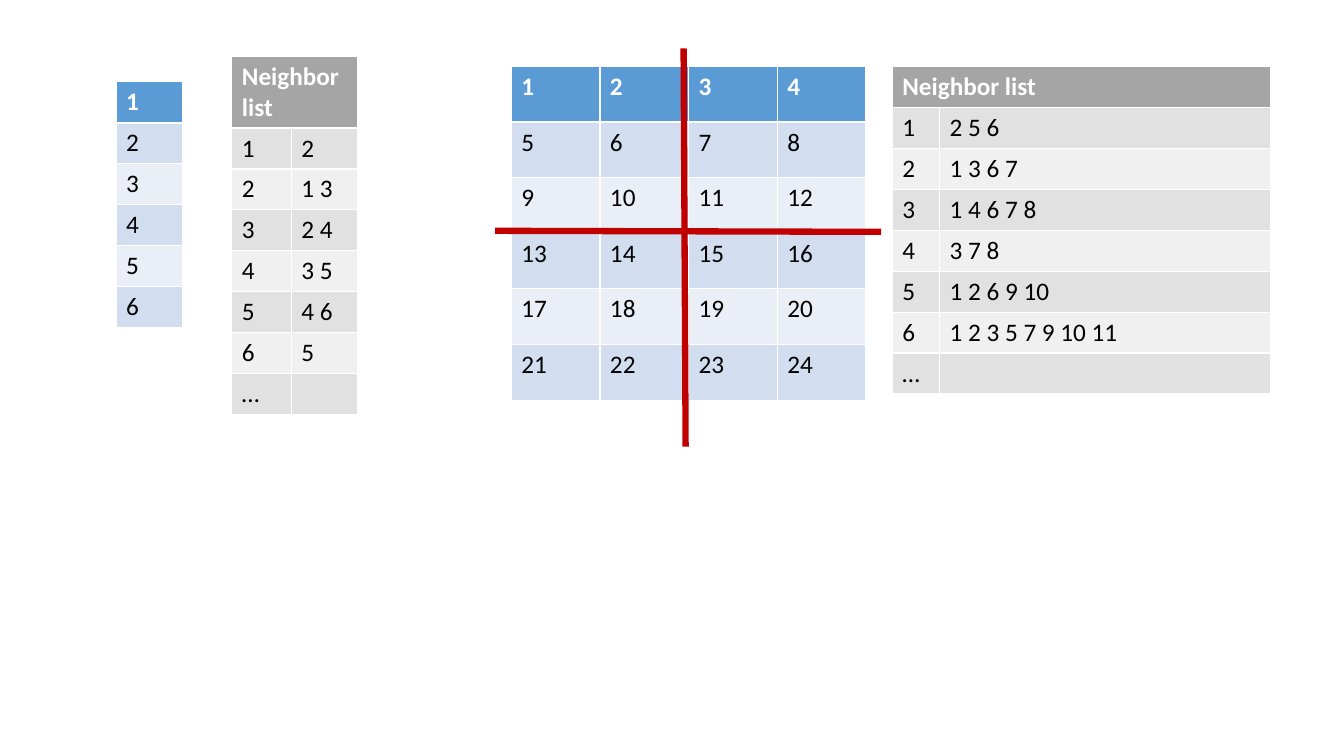
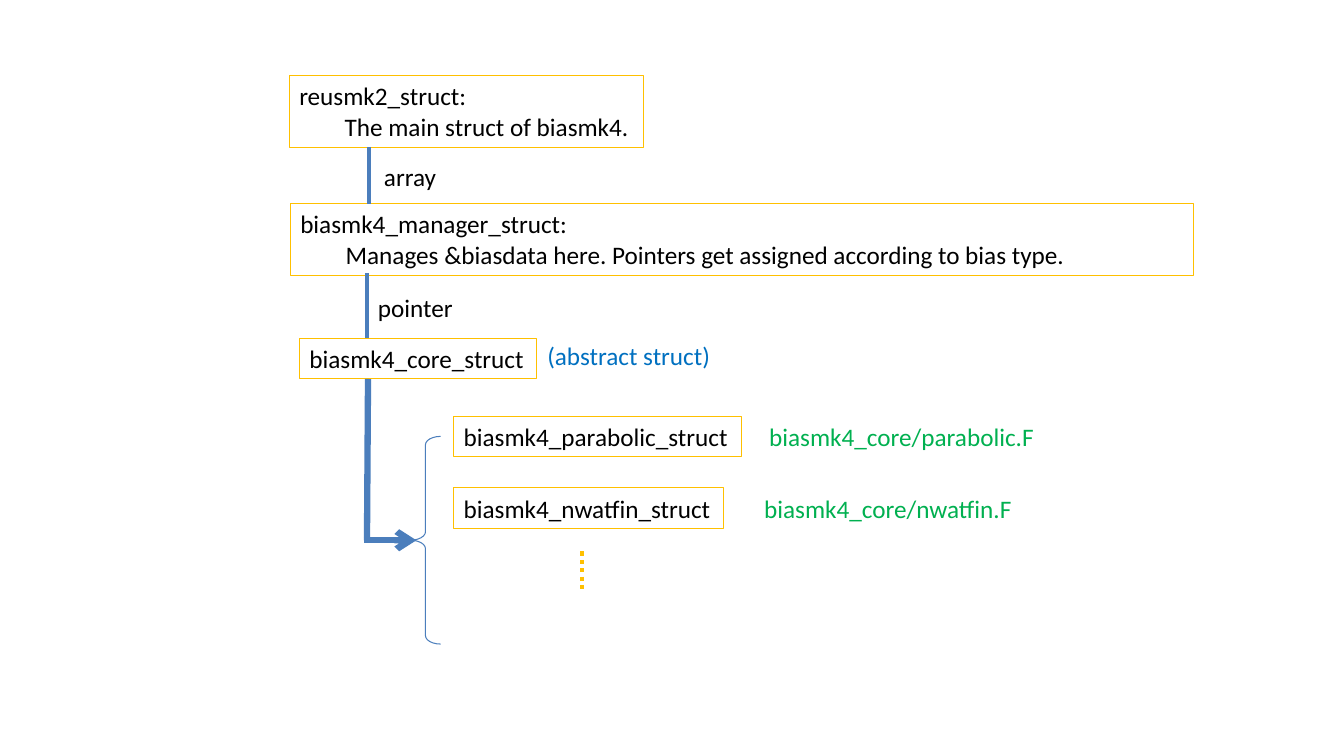
"""Build two slides: neighbor tables and a struct diagram."""
from pptx import Presentation
from pptx.dml.color import RGBColor
from pptx.enum import dml, shapes, text
from pptx.oxml.ns import qn
from pptx.util import Inches, Pt
from lxml import etree

FONT, SIZE = "Calibri", Pt(18)
WHITE = RGBColor(0xFF, 0xFF, 0xFF)
BLACK = RGBColor(0x00, 0x00, 0x00)
RED = RGBColor(0xC0, 0x00, 0x00)
GOLD = RGBColor(0xFF, 0xC0, 0x00)
STEEL = RGBColor(0x4B, 0x7E, 0xBC)
AZURE = RGBColor(0x00, 0x70, 0xC0)
GREEN = RGBColor(0x00, 0xB0, 0x50)
BLUES = [RGBColor(0x5B, 0x9B, 0xD5), RGBColor(0xD2, 0xDE, 0xEF), RGBColor(0xEA, 0xEF, 0xF7)]
GREYS = [RGBColor(0xA5, 0xA5, 0xA5), RGBColor(0xE1, 0xE1, 0xE1), RGBColor(0xF0, 0xF0, 0xF0)]


def count(rows, cols):
    return [[str(r * cols + c + 1) for c in range(cols)] for r in range(rows)]


def near(lists):
    rows = [[str(n), item] for n, item in enumerate(lists, 1)]
    return [["Neighbor list", ""]] + rows + [["…", ""]]


CHAIN = near(["2", "1 3", "2 4", "3 5", "4 6", "5"])
MESH = near(["2 5 6", "1 3 6 7", "1 4 6 7 8", "3 7 8", "1 2 6 9 10", "1 2 3 5 7 9 10 11"])

TABLES = [
    (5.07, 0.66, [0.88] * 4, 0.55, 3.31, BLUES, count(6, 4)),
    (8.85, 0.66, [0.47, 3.28], 0.41, 3.24, GREYS, MESH),
    (1.15, 0.81, [0.66], 0.41, 2.44, BLUES, count(6, 1)),
    (2.3, 0.56, [0.59, 0.66], 0.7, 3.54, GREYS, CHAIN),
]
CUTS = [
    (6.78, 0.48, 6.8, 4.43, RED, 4.5),
    (4.91, 2.29, 8.74, 2.3, RED, 4.5),
]

BOXES = [
    (2.87, 0.75, 3.51, ["reusmk2_struct:", "The main struct of biasmk4."]),
    (2.88, 2.02, 8.96, ["biasmk4_manager_struct:",
                        "Manages &biasdata here. Pointers get assigned according to bias type."]),
    (2.97, 3.36, 2.35, ["biasmk4_core_struct"]),
    (4.5, 4.13, 2.85, ["biasmk4_parabolic_struct"]),
    (4.5, 4.84, 2.68, ["biasmk4_nwatfin_struct"]),
]
LABELS = [
    (3.71, 1.55, 0.72, "array", BLACK),
    (3.65, 2.85, 0.95, "pointer", BLACK),
    (5.33, 3.33, 1.83, "(abstract struct)", AZURE),
    (7.53, 4.13, 2.85, "biasmk4_core/parabolic.F", GREEN),
    (7.48, 4.84, 2.69, "biasmk4_core/nwatfin.F", GREEN),
]
LINKS = [
    (3.66, 1.46, 3.66, 2.02, STEEL, 2.25),
    (3.64, 2.71, 3.64, 3.35, STEEL, 2.25),
    (3.65, 3.76, 3.64, 5.36, STEEL, 4.5),
]
ARROW = (3.61, 5.36, 4.13, 5.36, STEEL, 4.5)
DOTS = (5.77, 5.47, 5.77, 5.87, GOLD, 3)
BRACE = (4.07, 4.33, 0.3, 2.06)
INDENT = Inches(0.45)


def write(para, words, color, bold=False):
    para.alignment = text.PP_ALIGN.LEFT
    run = para.add_run()
    run.text = words
    font = run.font
    font.name, font.size, font.bold = FONT, SIZE, bold
    font.color.rgb = color


def fill(frame, lines, color, wrap=False):
    frame.word_wrap = wrap
    frame.vertical_anchor = text.MSO_ANCHOR.TOP
    for n, words in enumerate(lines):
        para = frame.add_paragraph() if n else frame.paragraphs[0]
        if n:
            para._p.get_or_add_pPr().set("marL", str(INDENT))
        write(para, words, color)


def grid(slide, left, top, widths, head, high, tones, rows):
    frame = slide.shapes.add_table(len(rows), len(widths), Inches(left), Inches(top),
                                   Inches(sum(widths)), Inches(high))
    table = frame.table
    for col, width in zip(table.columns, widths):
        col.width = Inches(width)
    step = (high - head) / (len(rows) - 1)
    for r, row in enumerate(rows):
        table.rows[r].height = Inches(step if r else head)
        tone = tones[2 - r % 2] if r else tones[0]
        for c, words in enumerate(row):
            cell = table.cell(r, c)
            cell.fill.solid()
            cell.fill.fore_color.rgb = tone
            if words:
                write(cell.text_frame.paragraphs[0], words, BLACK if r else WHITE, not r)
            else:
                cell.text_frame.paragraphs[0].font.size = SIZE
    if tones is GREYS:
        table.cell(0, 0).merge(table.cell(0, 1))


def link(slide, x1, y1, x2, y2, color, width):
    line = slide.shapes.add_connector(shapes.MSO_CONNECTOR.STRAIGHT, Inches(x1), Inches(y1),
                                      Inches(x2), Inches(y2))
    line.line.color.rgb = color
    line.line.width = Pt(width)
    etree.SubElement(line._element.spPr, qn("a:effectLst"))
    return line


def outline(slide, kind, left, top, width, high, color):
    shape = slide.shapes.add_shape(kind, Inches(left), Inches(top), Inches(width), Inches(high))
    shape.shadow.inherit = False
    shape.fill.background()
    shape.line.color.rgb = color
    shape.line.width = Pt(0.75)
    return shape


def lists(slide):
    for item in TABLES:
        grid(slide, *item)
    for item in CUTS:
        link(slide, *item)


def structs(slide):
    for left, top, width, lines in BOXES:
        high = 0.4 if len(lines) == 1 else 0.71
        box = outline(slide, shapes.MSO_SHAPE.RECTANGLE, left, top, width, high, GOLD)
        fill(box.text_frame, lines, BLACK, width > 5)
    for left, top, width, words, color in LABELS:
        box = slide.shapes.add_textbox(Inches(left), Inches(top), Inches(width), Inches(0.4))
        fill(box.text_frame, [words], color)
    brace = outline(slide, shapes.MSO_SHAPE.LEFT_BRACE, *BRACE, STEEL)
    brace.adjustments[0] = 0.278
    for item in LINKS:
        link(slide, *item)
    link(slide, *DOTS).line.dash_style = dml.MSO_LINE.ROUND_DOT
    tip = link(slide, *ARROW)
    etree.SubElement(tip.line._get_or_add_ln(), qn("a:tailEnd"), type="arrow")


def main():
    deck = Presentation()
    deck.slide_width, deck.slide_height = Inches(13.33), Inches(7.5)
    for draw in (lists, structs):
        draw(deck.slides.add_slide(deck.slide_layouts[6]))
    deck.save("out.pptx")


if __name__ == "__main__":
    main()
